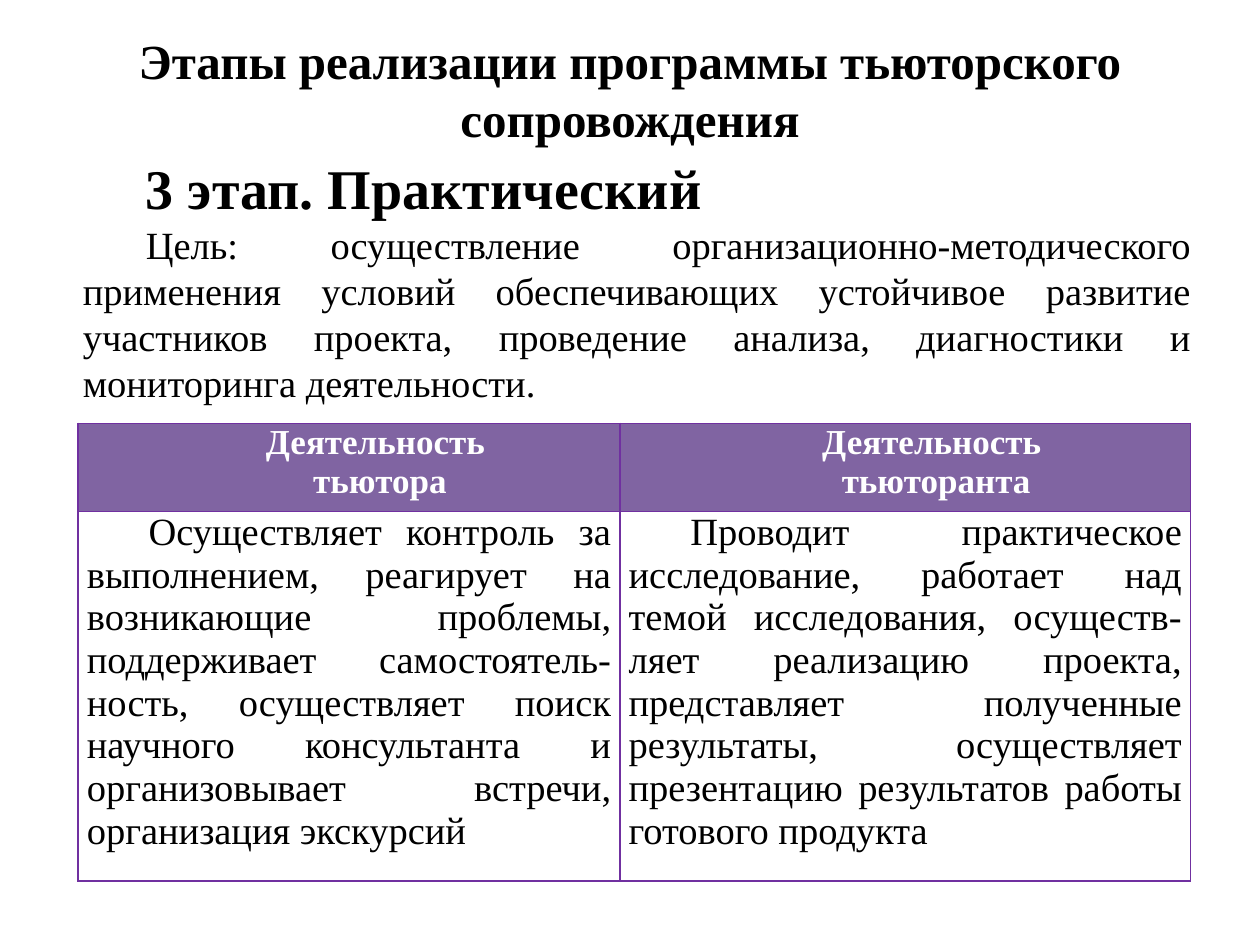
from lxml import etree
from pptx import Presentation
from pptx.dml.color import RGBColor
from pptx.enum import text
from pptx.oxml import ns
from pptx.util import Inches, Pt

FONT = "Times New Roman"
BLACK = RGBColor(0x00, 0x00, 0x00)
WHITE = RGBColor(0xFF, 0xFF, 0xFF)
HEADER_FILL = RGBColor(0x80, 0x64, 0xA2)
BORDER = RGBColor(0x70, 0x30, 0xA0)
LEFT, CENTER, JUSTIFY = text.PP_ALIGN.LEFT, text.PP_ALIGN.CENTER, text.PP_ALIGN.JUSTIFY

# Content
TITLE = "Этапы реализации программы тьюторского сопровождения"
STAGE = "3 этап. Практический"
GOAL = ("Цель: осуществление организационно-методического применения условий "
        "обеспечивающих устойчивое развитие участников проекта, проведение анализа, "
        "диагностики и мониторинга деятельности.")
HEADERS = ["Деятельность \nтьютора", "Деятельность \nтьюторанта"]
ACTIVITIES = [
    "Осуществляет контроль за выполнением, реагирует на возникающие проблемы, "
    "поддерживает самостоятель-ность, осуществляет поиск научного консультанта и "
    "организовывает встречи, организация экскурсий",
    "Проводит практическое исследование, работает над темой исследования, "
    "осуществ-ляет реализацию проекта, представляет полученные результаты, "
    "осуществляет презентацию результатов работы готового продукта",
]
COLUMN_WIDTHS = [4.3, 4.53]
ROW_HEIGHTS = [0.7, 2.85]


def style(paragraph, size, align, bold=False, color=BLACK, indent=0, margin=0):
    properties = paragraph._p.get_or_add_pPr()
    properties.set("marL", str(Inches(margin)))
    properties.set("indent", str(Inches(indent)))
    paragraph.alignment = align
    paragraph.line_spacing = 1.0
    for run in paragraph.runs:
        run.font.name, run.font.size = FONT, Pt(size)
        run.font.bold, run.font.color.rgb = bold, color


def add_text(slide, box, content, anchor):
    frame = slide.shapes.add_textbox(*map(Inches, box)).text_frame
    frame.word_wrap = True
    frame.vertical_anchor = anchor
    frame.text = content
    return frame.paragraphs


def add_borders(cell):
    properties = cell._tc.get_or_add_tcPr()
    for position, side in enumerate(("lnL", "lnR", "lnT", "lnB")):
        line = etree.Element(ns.qn(f"a:{side}"), w=str(Pt(1)))
        fill = etree.SubElement(line, ns.qn("a:solidFill"))
        etree.SubElement(fill, ns.qn("a:srgbClr"), val=str(BORDER))
        properties.insert(position, line)


def main():
    deck = Presentation()
    deck.slide_width, deck.slide_height = Inches(10), Inches(7.5)
    slide = deck.slides.add_slide(deck.slide_layouts[6])

    # Title
    title, = add_text(slide, (0.5, 0.08, 9, 1.25), TITLE, text.MSO_ANCHOR.MIDDLE)
    style(title, 28, CENTER, bold=True)

    # Stage and its goal
    stage, goal = add_text(slide, (0.55, 1.17, 9, 1.88), f"{STAGE}\n{GOAL}",
                           text.MSO_ANCHOR.TOP)
    style(stage, 32, LEFT, bold=True, indent=0.5, margin=0.01)
    style(goal, 22, JUSTIFY, indent=0.5, margin=0.01)

    # Table of activities
    activity_frame = slide.shapes.add_table(2, 2, Inches(0.62), Inches(3.36),
                                            Inches(sum(COLUMN_WIDTHS)),
                                            Inches(sum(ROW_HEIGHTS)))
    table = activity_frame.table
    for column, width in zip(table.columns, COLUMN_WIDTHS):
        column.width = Inches(width)
    for row, height in zip(table.rows, ROW_HEIGHTS):
        row.height = Inches(height)
    activity_frame.height = Inches(3.64)
    looks = [(20, CENTER, True, WHITE), (22, JUSTIFY, False, BLACK)]
    for r, (contents, look) in enumerate(zip((HEADERS, ACTIVITIES), looks)):
        for c, content in enumerate(contents):
            cell = table.cell(r, c)
            cell.margin_left = cell.margin_right = Inches(0.07)
            cell.margin_top = cell.margin_bottom = 0
            cell.fill.solid()
            cell.fill.fore_color.rgb = HEADER_FILL if r == 0 else WHITE
            add_borders(cell)
            cell.text_frame.text = content
            for paragraph in cell.text_frame.paragraphs:
                style(paragraph, *look, indent=0.49)

    deck.save("out.pptx")


if __name__ == "__main__":
    main()
